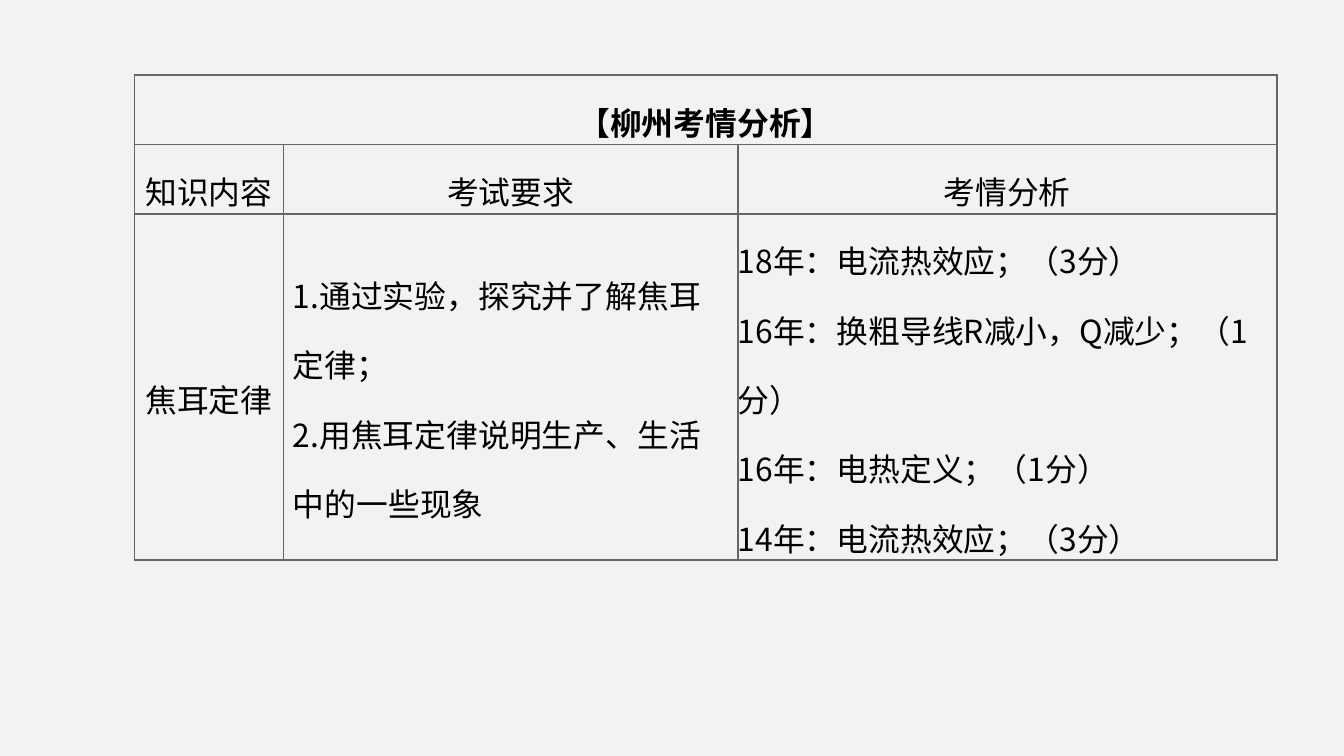
"""Build a slide with a table analysing exam topics on Joule's law."""
from lxml import etree
from pptx import Presentation
from pptx.dml.color import RGBColor
from pptx.enum import text as t
from pptx.oxml import ns
from pptx.util import Inches, Pt

FONT = "Noto Sans CJK SC"
PAPER, INK, RULE = "F2F2F2", "000000", "666666"
WIDTH = 10
HEIGHT = WIDTH * 9 / 16
COLUMNS = [1.11, 3.38, 4.01]
ROWS = [0.51, 0.51, 2.57]
TITLE = "【柳州考情分析】"
HEADINGS = ["知识内容", "考试要求", "考情分析"]
TOPIC = "焦耳定律"
REQUIREMENTS = ["1.通过实验，探究并了解焦耳定律；", "2.用焦耳定律说明生产、生活中的一些现象"]
QUESTIONS = [
    "18年：电流热效应；（3分）",
    "16年：换粗导线R减小，Q减少；（1分）",
    "16年：电热定义；（1分）",
    "14年：电流热效应；（3分）",
]


def color(value):
    return RGBColor.from_string(value)


def add_borders(cell):
    properties = cell._tc.get_or_add_tcPr()
    for side in ("lnL", "lnR", "lnT", "lnB"):
        line = etree.SubElement(properties, ns.qn(f"a:{side}"), w=str(Pt(1)))
        fill = etree.SubElement(line, ns.qn("a:solidFill"))
        etree.SubElement(fill, ns.qn("a:srgbClr"), val=RULE)


def write(cell, lines, bold=False, align=t.PP_ALIGN.CENTER, inset=0):
    cell.vertical_anchor = t.MSO_ANCHOR.MIDDLE
    cell.margin_left = cell.margin_right = Inches(inset)
    cell.margin_top = cell.margin_bottom = 0
    frame = cell.text_frame
    for index, line in enumerate(lines):
        para = frame.add_paragraph() if index else frame.paragraphs[0]
        para.alignment = align
        para.line_spacing = 1.5
        span = para.add_run()
        span.text = line
        span.font.size = Pt(17)
        span.font.bold = bold
        span.font.color.rgb = color(INK)
        span.font.name = FONT
        etree.SubElement(span.font._element, ns.qn("a:ea"), typeface=FONT)


def main():
    deck = Presentation()
    deck.slide_width, deck.slide_height = Inches(WIDTH), Inches(HEIGHT)
    page = deck.slides.add_slide(deck.slide_layouts[6])
    page.background.fill.solid()
    page.background.fill.fore_color.rgb = color(PAPER)

    table = page.shapes.add_table(
        len(ROWS), len(COLUMNS), Inches(1), Inches(0.56),
        Inches(sum(COLUMNS)), Inches(sum(ROWS))).table
    table.first_row = table.horz_banding = False
    for column, width in zip(table.columns, COLUMNS):
        column.width = Inches(width)
    for row, height in zip(table.rows, ROWS):
        row.height = Inches(height)
    for cell in table.iter_cells():
        add_borders(cell)
        cell.fill.solid()
        cell.fill.fore_color.rgb = color(PAPER)

    table.cell(0, 0).merge(table.cell(0, len(COLUMNS) - 1))
    write(table.cell(0, 0), [TITLE], bold=True)
    for index, heading in enumerate(HEADINGS):
        write(table.cell(1, index), [heading])
    write(table.cell(2, 0), [TOPIC])
    write(table.cell(2, 1), REQUIREMENTS, align=t.PP_ALIGN.LEFT, inset=0.07)
    write(table.cell(2, 2), QUESTIONS, align=t.PP_ALIGN.LEFT)
    deck.save("out.pptx")


if __name__ == "__main__":
    main()
